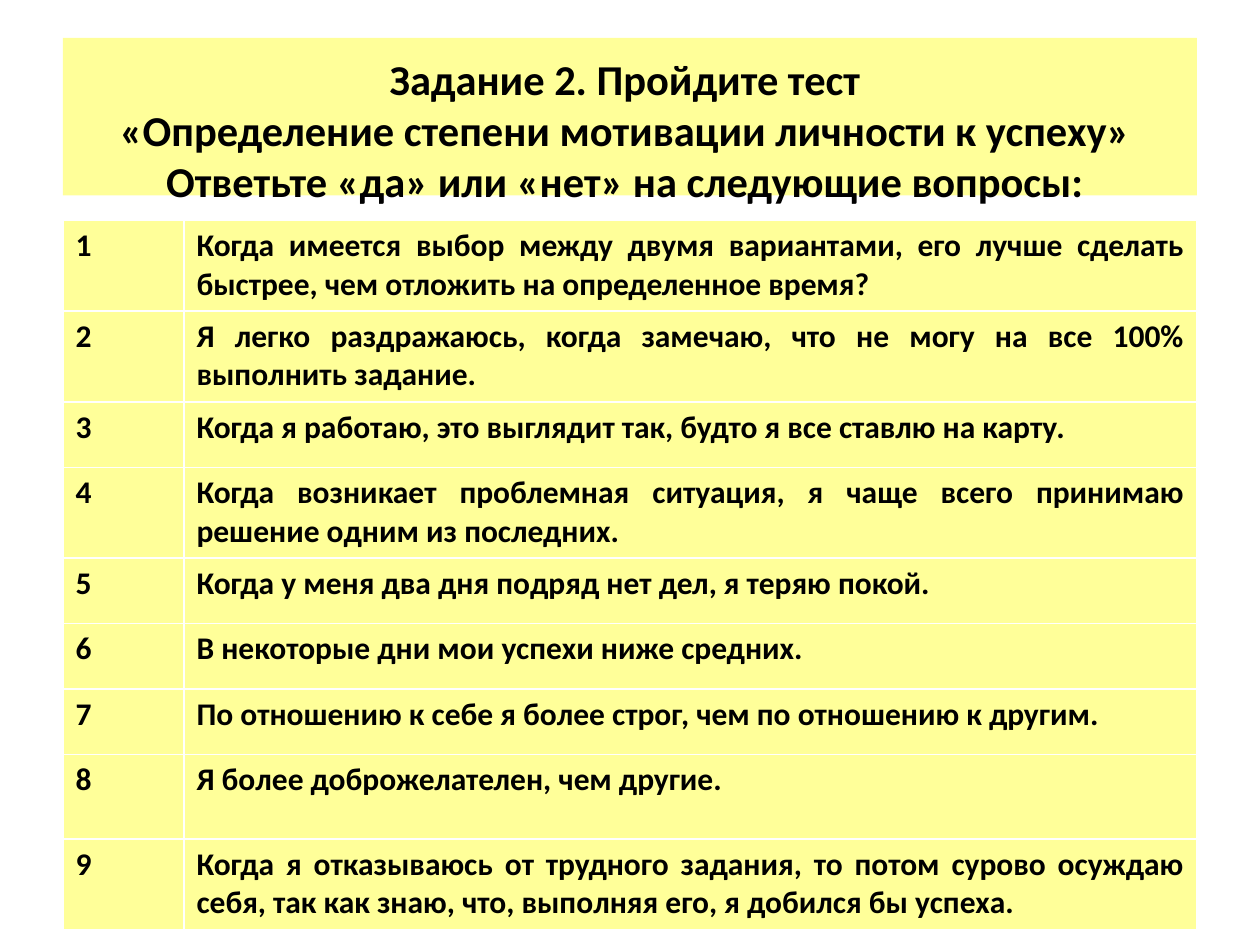
from dataclasses import dataclass

from pptx import Presentation
from pptx import util as u
from pptx.dml import color
from pptx.enum import shapes, text

COLORS = {"panel": "FFFF99", "ink": "000000"}
FONT = "Calibri"
WIDTH, HEIGHT = u.Inches(10), u.Inches(7.5)

# Shares of the slide's size
LEFT, SPAN = 0.05, 0.9
TITLE_TOP, TITLE_HEIGHT = 0.04, 1 / 6
TABLE_TOP = 0.2333
NUMBER_SHARE = 0.096

# Row heights in inches
SHORT, TALLER, DOUBLE = 0.52, 0.67, 0.72


@dataclass
class Question:
    wording: str
    height: float = SHORT


TITLE = [
    "Задание 2. Пройдите тест",
    "«Определение степени мотивации личности к успеху»",
    "Ответьте «да» или «нет» на следующие вопросы:",
]

QUESTIONS = [
    Question("Когда имеется выбор между двумя вариантами, его лучше сделать "
             "быстрее, чем отложить на определенное время?", DOUBLE),
    Question("Я легко раздражаюсь, когда замечаю, что не могу на все 100% "
             "выполнить задание.", DOUBLE),
    Question("Когда я работаю, это выглядит так, будто я все ставлю на карту."),
    Question("Когда возникает проблемная ситуация, я чаще всего принимаю "
             "решение одним из последних.", DOUBLE),
    Question("Когда у меня два дня подряд нет дел, я теряю покой."),
    Question("В некоторые дни мои успехи ниже средних."),
    Question("По отношению к себе я более строг, чем по отношению к другим."),
    Question("Я более доброжелателен, чем другие.", TALLER),
    Question("Когда я отказываюсь от трудного задания, то потом сурово осуждаю "
             "себя, так как знаю, что, выполняя его, я добился бы успеха.", DOUBLE),
]


def paint(fill) -> None:
    fill.solid()
    fill.fore_color.rgb = color.RGBColor.from_string(COLORS["panel"])


def style(paragraph, size: float, alignment) -> None:
    paragraph.alignment = alignment
    font = paragraph.font
    font.name, font.size, font.bold = FONT, u.Pt(size), True
    font.color.rgb = color.RGBColor.from_string(COLORS["ink"])


def draw_title(page, lines: list[str]) -> None:
    box = page.shapes.add_shape(
        shapes.MSO_SHAPE.RECTANGLE, int(WIDTH * LEFT), int(HEIGHT * TITLE_TOP),
        int(WIDTH * SPAN), int(HEIGHT * TITLE_HEIGHT))
    box.shadow.inherit = False
    paint(box.fill)
    box.line.fill.background()
    frame = box.text_frame
    frame.word_wrap = True
    frame.vertical_anchor = text.MSO_ANCHOR.TOP
    frame.margin_top, frame.margin_right = u.Inches(0.12), u.Inches(0.18)
    frame.text = "\n".join(lines)
    for paragraph in frame.paragraphs:
        style(paragraph, 24.3, text.PP_ALIGN.CENTER)


def fill_cell(cell, wording: str, alignment) -> None:
    paint(cell.fill)
    cell.text = wording
    style(cell.text_frame.paragraphs[0], 18, alignment)


def draw_questions(page, questions: list[Question]) -> None:
    total = sum(question.height for question in questions)
    table = page.shapes.add_table(
        len(questions), 2, int(WIDTH * LEFT), int(HEIGHT * TABLE_TOP),
        int(WIDTH * SPAN), u.Inches(total)).table
    table.columns[0].width = int(WIDTH * NUMBER_SHARE)
    table.columns[1].width = int(WIDTH * (SPAN - NUMBER_SHARE))
    for index, question in enumerate(questions):
        table.rows[index].height = u.Inches(question.height)
        fill_cell(table.cell(index, 0), str(index + 1), text.PP_ALIGN.LEFT)
        fill_cell(table.cell(index, 1), question.wording, text.PP_ALIGN.JUSTIFY)


def main() -> None:
    deck = Presentation()
    deck.slide_width, deck.slide_height = WIDTH, HEIGHT
    page = deck.slides.add_slide(deck.slide_layouts[6])
    draw_title(page, TITLE)
    draw_questions(page, QUESTIONS)
    deck.save("out.pptx")


if __name__ == "__main__":
    main()
